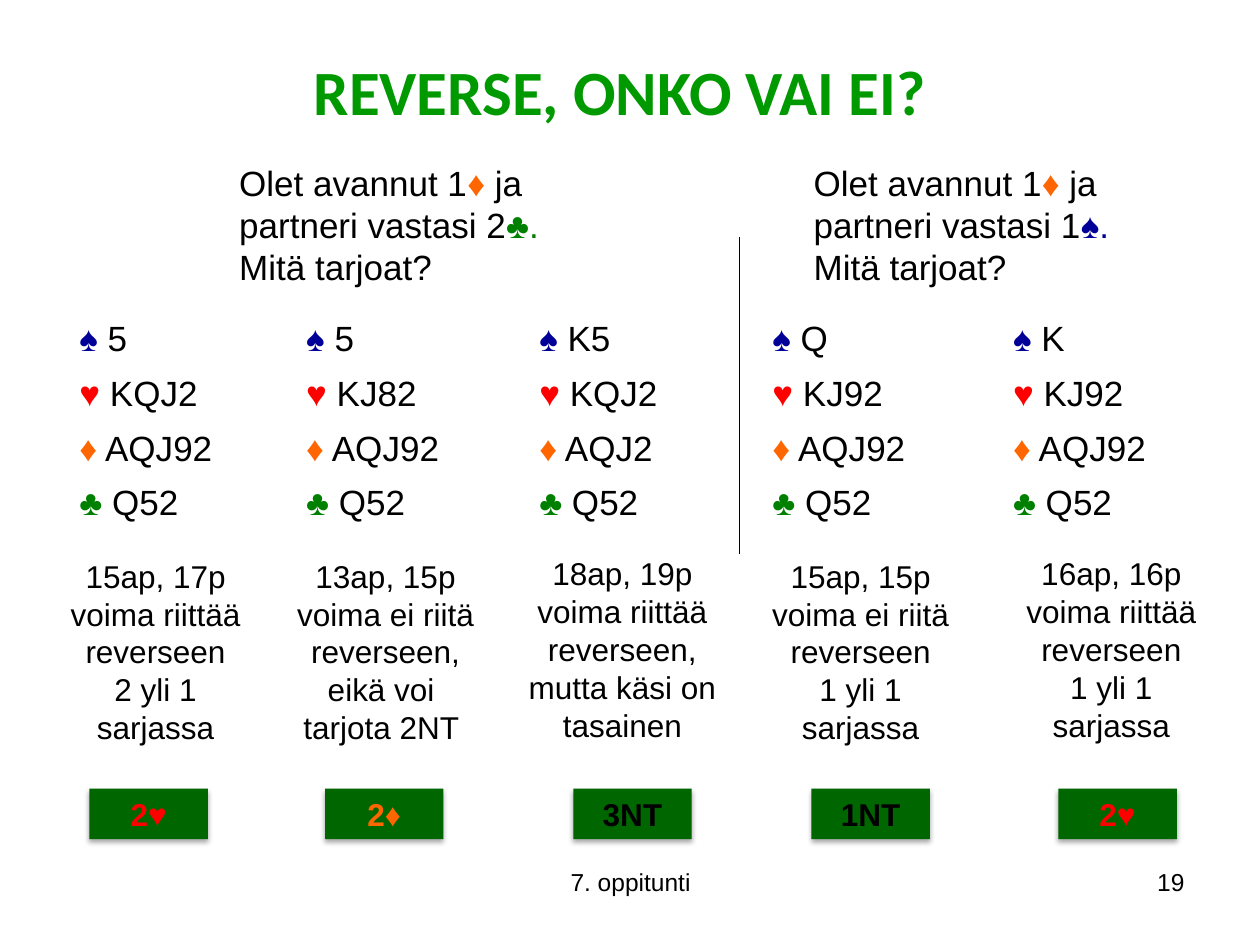
from dataclasses import dataclass
from typing import NamedTuple

import lxml.etree
import pptx
import pptx.dml.color
import pptx.enum.shapes
import pptx.enum.text
import pptx.oxml.ns
import pptx.util

Inches = pptx.util.Inches
Pt = pptx.util.Pt
Align = pptx.enum.text.PP_ALIGN
Anchor = pptx.enum.text.MSO_ANCHOR
AutoSize = pptx.enum.text.MSO_AUTO_SIZE
qn = pptx.oxml.ns.qn

BLACK, GREEN, TITLE_GREEN = "000000", "006600", "009900"
SUIT_COLORS = {"♠": "000099", "♥": "FF0000", "♦": "FF6600", "♣": "008000"}
SUIT_GAPS = {"♠": ("♠", " "), "♥": ("♥ ", ""), "♦": ("♦", " "), "♣": ("♣", " ")}
COLUMN_WIDTHS = (1.8, 1.85, 1.85, 1.91, 1.88)
ROW_HEIGHT = 0.43


class Run(NamedTuple):
    text: str
    color: str = BLACK


class Box(NamedTuple):
    left: float
    top: float
    width: float
    height: float


@dataclass
class Question:
    box: Box
    response: Run
    ending: str


@dataclass
class Hand:
    cards: tuple[str, str, str, str]
    verdict: tuple[str, ...]
    verdict_box: Box
    bid: Run
    bid_left: float


QUESTIONS = [
    Question(Box(1.8, 1.23, 3.02, 1.11), Run("♣.\n", SUIT_COLORS["♣"]), "2"),
    Question(Box(6.36, 1.23, 2.85, 1.11), Run("♠. ", SUIT_COLORS["♠"]), "1"),
]
HANDS = [
    Hand(("5", "KQJ2", "AQJ92", "Q52"),
         ("15ap, 17p\nvoima riittää reverseen\n2 yli 1 sarjassa",),
         Box(0.45, 4.37, 1.57, 1.62), Run("2♥", SUIT_COLORS["♥"]), 0.71),
    Hand(("5", "KJ82", "AQJ92", "Q52"),
         ("13ap, 15p\nvoima ei riitä reverseen, eikä voi \ntarjota 2NT ",),
         Box(2.13, 4.37, 1.86, 1.62), Run("2♦", SUIT_COLORS["♦"]), 2.58),
    Hand(("K5", "KQJ2", "AQJ2", "Q52"),
         ("18ap, 19p\nvoima riittää reverseen, mutta käsi on tasainen",),
         Box(4.01, 4.35, 1.86, 1.62), Run("3NT"), 4.55),
    Hand(("Q", "KJ92", "AQJ92", "Q52"),
         ("15ap, 15p\nvoima ei riitä reverseen", "1 yli 1 sarjassa"),
         Box(5.92, 4.37, 1.82, 1.62), Run("1NT"), 6.44),
    Hand(("K", "KJ92", "AQJ92", "Q52"),
         ("16ap, 16p\nvoima riittää reverseen", "1 yli 1 sarjassa"),
         Box(7.91, 4.35, 1.82, 1.62), Run("2♥", SUIT_COLORS["♥"]), 8.4),
]


def rgb(color: str) -> pptx.dml.color.RGBColor:
    return pptx.dml.color.RGBColor.from_string(color)


def to_inches(box: Box) -> list[int]:
    return [Inches(value) for value in box]


def write_paragraph(paragraph, runs: list[Run], size: int, alignment=Align.LEFT,
                    bold: bool = False, font_name: str = "Arial") -> None:
    paragraph.alignment = alignment
    paragraph.font.name = font_name
    paragraph.font.size = Pt(size)
    paragraph.font.bold = bold
    for text, color in runs:
        for index, line in enumerate(text.split("\n")):
            if index:
                paragraph.add_line_break()
            if line:
                run = paragraph.add_run()
                run.text = line
                run.font.color.rgb = rgb(color)


def add_text(slide, box: Box, paragraphs: list[list[Run]], size: int,
             alignment=Align.LEFT, auto_size=AutoSize.SHAPE_TO_FIT_TEXT) -> None:
    frame = slide.shapes.add_textbox(*to_inches(box)).text_frame
    frame.word_wrap = True
    frame.auto_size = auto_size
    for index, runs in enumerate(paragraphs):
        paragraph = frame.add_paragraph() if index else frame.paragraphs[0]
        write_paragraph(paragraph, runs, size, alignment)


def format_title(slide) -> None:
    title = slide.shapes.title
    title.left, title.top, title.width, title.height = to_inches(Box(0.51, 0.36, 8.82, 0.71))
    frame = title.text_frame
    frame.vertical_anchor = Anchor.MIDDLE
    frame.auto_size = AutoSize.SHAPE_TO_FIT_TEXT
    write_paragraph(frame.paragraphs[0], [Run("REVERSE, ONKO VAI EI?", TITLE_GREEN)],
                    36, Align.CENTER, True, "Calibri")


def add_hands_table(slide, hands: list[Hand]) -> None:
    box = Box(0.53, 2.49, sum(COLUMN_WIDTHS), ROW_HEIGHT * len(SUIT_COLORS))
    table = slide.shapes.add_table(len(SUIT_COLORS), len(hands), *to_inches(box)).table
    table.first_row = False
    table.horz_banding = False
    for column, width in zip(table.columns, COLUMN_WIDTHS):
        column.width = Inches(width)
    for row, (suit, color) in enumerate(SUIT_COLORS.items()):
        symbol, gap = SUIT_GAPS[suit]
        for column, hand in enumerate(hands):
            cell = table.cell(row, column)
            cell.fill.background()
            write_paragraph(cell.text_frame.paragraphs[0],
                            [Run(symbol, color), Run(gap + hand.cards[row])],
                            20, Align.JUSTIFY)


def add_question(slide, question: Question) -> None:
    runs = [Run("Olet avannut 1"), Run("♦", SUIT_COLORS["♦"]),
            Run(f" ja \npartneri vastasi {question.ending}"),
            question.response, Run("Mitä tarjoat?")]
    add_text(slide, question.box, [runs], 20)


def add_shadow(shape) -> None:
    effects = shape._element.spPr.find(qn("a:effectLst"))
    shadow = lxml.etree.SubElement(effects, qn("a:outerShdw"), blurRad=str(Pt(3.1)),
                                   dist=str(Pt(1.8)), dir="5400000", rotWithShape="0")
    color = lxml.etree.SubElement(shadow, qn("a:srgbClr"), val=BLACK)
    lxml.etree.SubElement(color, qn("a:alpha"), val="35000")


def add_bid(slide, hand: Hand) -> None:
    shape = slide.shapes.add_shape(pptx.enum.shapes.MSO_SHAPE.RECTANGLE,
                                   *to_inches(Box(hand.bid_left, 6.26, 0.94, 0.4)))
    shape.fill.solid()
    shape.fill.fore_color.rgb = rgb(GREEN)
    shape.line.fill.background()
    shape.shadow.inherit = False
    add_shadow(shape)
    shape.text_frame.vertical_anchor = Anchor.MIDDLE
    write_paragraph(shape.text_frame.paragraphs[0], [hand.bid], 18, Align.CENTER, True)


def add_divider(slide) -> None:
    divider = slide.shapes.add_connector(pptx.enum.shapes.MSO_CONNECTOR.STRAIGHT,
                                         Inches(5.87), Inches(1.88), Inches(5.87), Inches(4.4))
    divider.line.color.rgb = rgb(BLACK)
    divider.line.width = Pt(0.75)
    lxml.etree.SubElement(divider._element.spPr, qn("a:effectLst"))


def main() -> None:
    presentation = pptx.Presentation()
    presentation.slide_width = Inches(10)
    presentation.slide_height = Inches(7.5)
    slide = presentation.slides.add_slide(presentation.slide_layouts[5])
    format_title(slide)
    add_hands_table(slide, HANDS)
    for question in QUESTIONS:
        add_question(slide, question)
    add_divider(slide)
    for hand in HANDS:
        add_bid(slide, hand)
        add_text(slide, hand.verdict_box, [[Run(text)] for text in hand.verdict],
                 18, Align.CENTER)
    add_text(slide, Box(3.42, 6.83, 3.17, 0.52), [[Run("7. oppitunti")]], 14,
             Align.CENTER, AutoSize.NONE)
    add_text(slide, Box(7.17, 6.83, 2.33, 0.52), [[Run("19")]], 14,
             Align.RIGHT, AutoSize.NONE)
    presentation.save("out.pptx")


if __name__ == "__main__":
    main()
